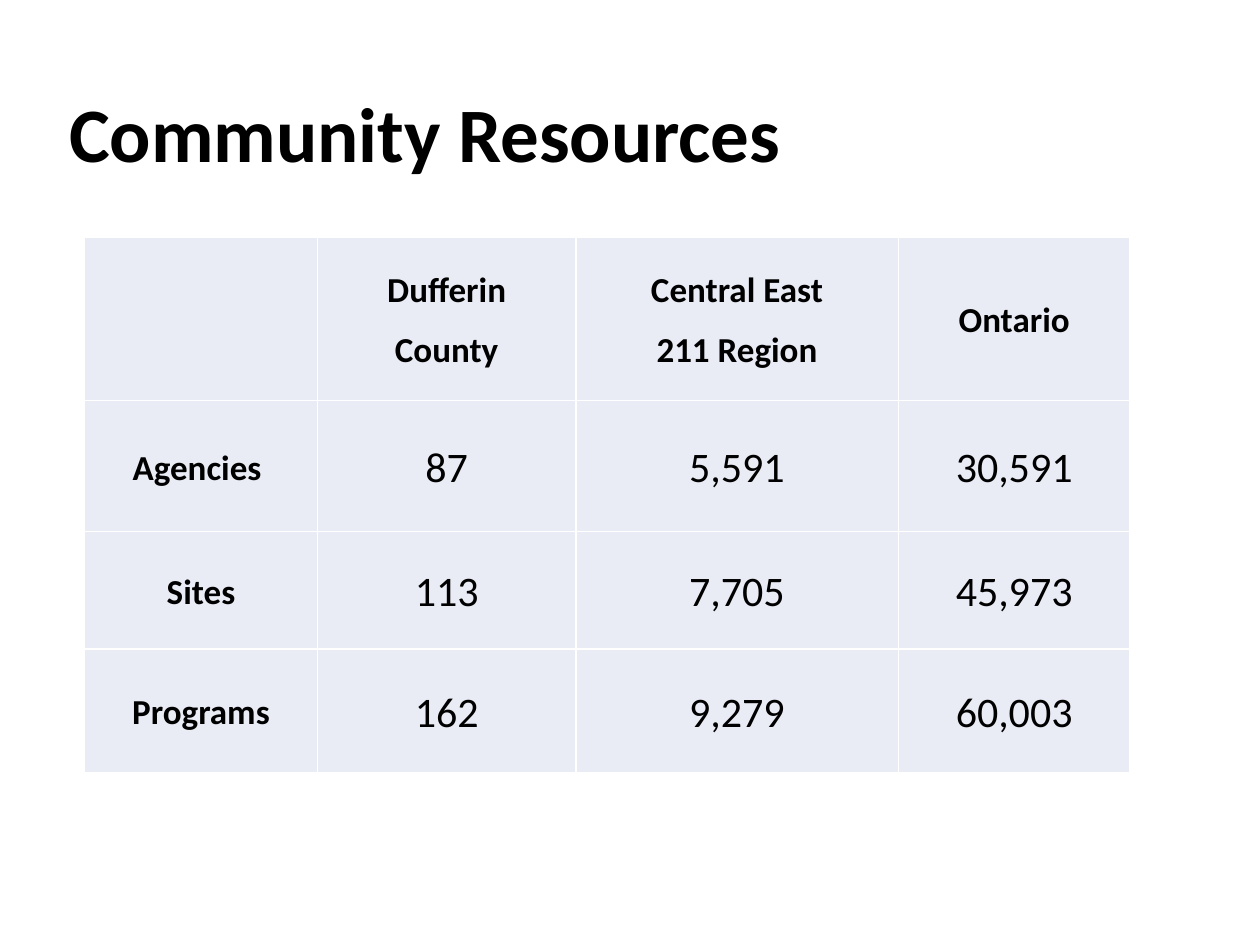
import pptx
import pptx.dml.color
import pptx.enum.text
import pptx.oxml
import pptx.oxml.ns
import pptx.util
from pptx.util import Inches

COLORS = {"text": "000000", "cell": "E9EBF5", "border": "FFFFFF"}
FONT = "Calibri"

RESOURCES = [
    ["", "Dufferin\nCounty", "Central East\n211 Region", "Ontario"],
    ["Agencies ", "87", "5,591", "30,591"],
    ["Sites", "113", "7,705", "45,973"],
    ["Programs", "162", "9,279", "60,003"],
]
COLUMN_WIDTHS = [1.85, 2.05, 2.56, 1.84]
ROW_HEIGHTS = [1.3, 1.04, 0.93, 0.98]


def rgb(name):
    return pptx.dml.color.RGBColor.from_string(COLORS[name])


def write_text(frame, text, size=20, bold=False, align="LEFT",
               line_spacing=1.0, space_after=0):
    """Write one paragraph for each line of text."""
    frame.word_wrap = True
    frame.vertical_anchor = pptx.enum.text.MSO_ANCHOR.MIDDLE
    for index, line in enumerate(text.split("\n")):
        paragraph = frame.paragraphs[0] if index == 0 else frame.add_paragraph()
        paragraph.alignment = getattr(pptx.enum.text.PP_ALIGN, align)
        paragraph.line_spacing = line_spacing
        paragraph.space_after = pptx.util.Pt(space_after)
        run = paragraph.add_run()
        run.text = line
        run.font.name = FONT
        run.font.size = pptx.util.Pt(size)
        run.font.bold = bold
        run.font.color.rgb = rgb("text")


def set_borders(cell, width=1):
    properties = cell._tc.get_or_add_tcPr()
    for index, side in enumerate(("lnL", "lnR", "lnT", "lnB")):
        # Borders come before the fill in the cell properties
        properties.insert(index, pptx.oxml.parse_xml(
            f'<a:{side} {pptx.oxml.ns.nsdecls("a")} w="{pptx.util.Pt(width)}">'
            f'<a:solidFill><a:srgbClr val="{COLORS["border"]}"/></a:solidFill>'
            f'</a:{side}>'))


def add_title(slide, left, top, width, height):
    title = slide.shapes.add_textbox(
        Inches(left), Inches(top), Inches(width), Inches(height))
    write_text(title.text_frame, "Community Resources", size=44, bold=True,
               line_spacing=0.9)


def add_resource_table(slide, left, top):
    table = slide.shapes.add_table(
        len(ROW_HEIGHTS), len(COLUMN_WIDTHS), Inches(left), Inches(top),
        Inches(sum(COLUMN_WIDTHS)), Inches(sum(ROW_HEIGHTS))).table
    table.first_row = table.horz_banding = False
    for column, width in zip(table.columns, COLUMN_WIDTHS):
        column.width = Inches(width)
    for row, height in zip(table.rows, ROW_HEIGHTS):
        row.height = Inches(height)

    for r, values in enumerate(RESOURCES):
        for c, value in enumerate(values):
            cell = table.cell(r, c)
            cell.margin_left = cell.margin_right = cell.margin_top = Inches(0.01)
            cell.margin_bottom = 0
            cell.fill.solid()
            cell.fill.fore_color.rgb = rgb("cell")
            set_borders(cell)
            if value:
                heading = r == 0 or c == 0
                write_text(cell.text_frame, value, size=20 if heading else 24,
                           bold=heading, align="CENTER",
                           line_spacing=1.07, space_after=8)
                cell.vertical_anchor = pptx.enum.text.MSO_ANCHOR.MIDDLE


def main():
    presentation = pptx.Presentation()
    presentation.slide_width = Inches(10)
    presentation.slide_height = Inches(7.5)
    slide = presentation.slides.add_slide(presentation.slide_layouts[6])

    # Table of counts by area, below the title
    add_resource_table(slide, 0.67, 1.88)
    add_title(slide, 0.45, 0.65, 8.62, 0.89)

    presentation.save("out.pptx")


if __name__ == "__main__":
    main()
